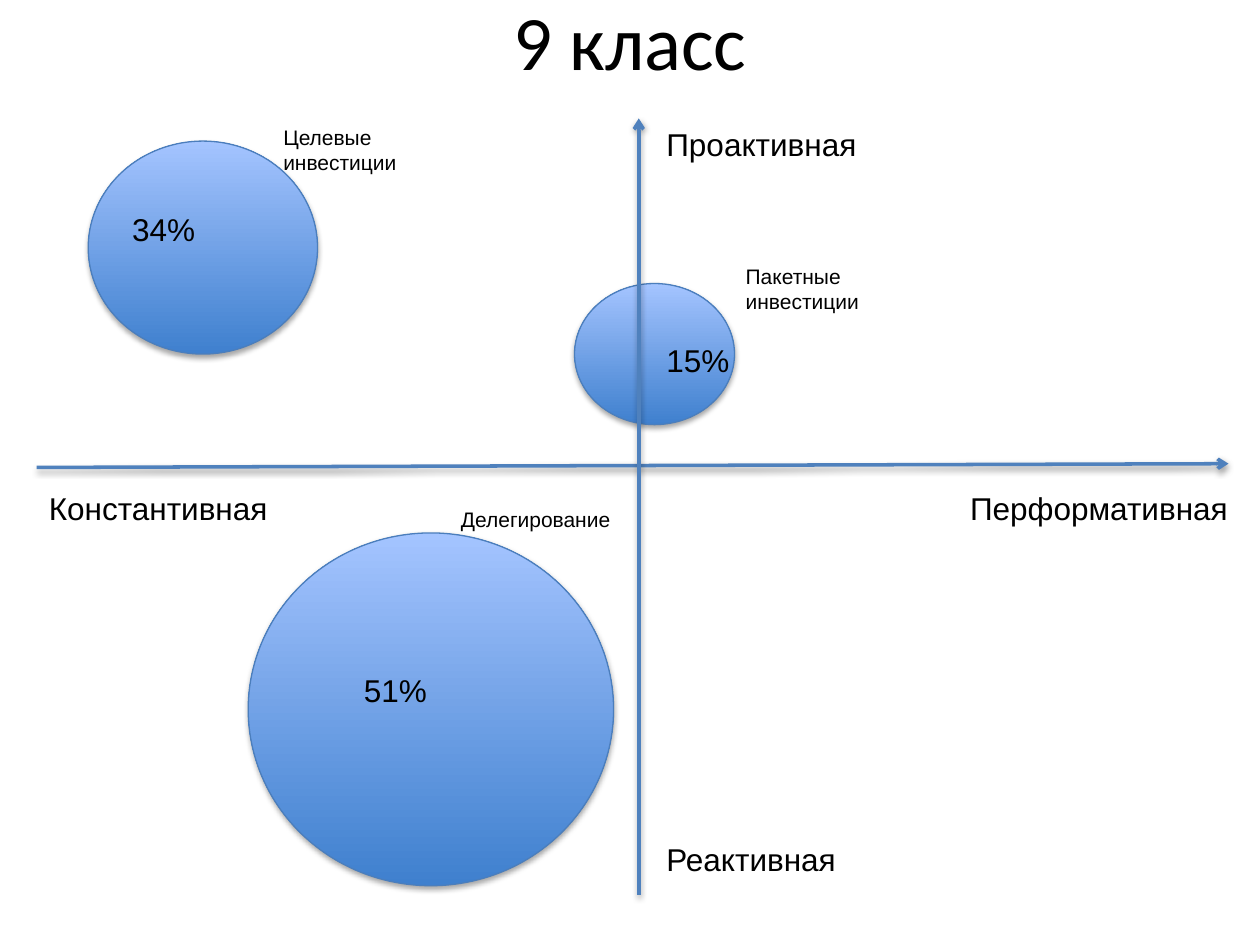
from lxml.etree import SubElement
from pptx import Presentation
from pptx.dml.color import RGBColor
from pptx.enum.shapes import MSO_CONNECTOR, MSO_SHAPE
from pptx.enum.text import MSO_ANCHOR, MSO_AUTO_SIZE, PP_ALIGN
from pptx.oxml.ns import qn
from pptx.util import Inches, Pt


class Theme:
    ink = RGBColor.from_string("000000")
    axis = RGBColor.from_string("4F81BD")
    edge = RGBColor.from_string("4B7EBC")
    shade = [RGBColor.from_string(c) for c in ("3F80CE", "A4C4FF")]
    title = {"size": Pt(44), "name": "Calibri"}
    label = {"size": Pt(18), "name": "Arial"}
    note = {"size": Pt(12), "name": "Arial"}
    frame = {"word_wrap": True, "auto_size": MSO_AUTO_SIZE.SHAPE_TO_FIT_TEXT}


COLS, ROWS = 100, 75
CELL = Inches(10) / COLS
PLOT = (2.9, 9.4, 94.6, 61.6)
HEAD = (5, -3.1, 90, 12.5)

ENDS = [
    ("Проактивная", (49, 0, 24.1, 4)),
    ("Реактивная", (49, 56.8, 27.9, 4)),
    ("Перформативная", (73.1, 28.9, 22.9, 4)),
    ("Константивная", (0, 28.9, 25, 4)),
]
GROUPS = [
    ("Делегирование", (32.7, 30.3, 15.1, 3),
     "51%", (25, 43.4, 12.5, 4), (16.8, 32.9, 29, 28)),
    ("Целевые инвестиции", (18.6, 0, 14, 5.1),
     "34%", (6.6, 6.8, 7.6, 4), (4.1, 1.8, 18.2, 16.9)),
    ("Пакетные инвестиции", (55.3, 11, 16.3, 5.1),
     "15%", (49, 17.2, 7.2, 4), (42.7, 13.1, 12.7, 11.2)),
]


def apply(item, style):
    for key, value in style.items():
        setattr(item, key, value)


def scale(*cells):
    return [round(n * CELL) for n in cells]


def within(box, part):
    x, y, w, h = part
    return scale(box[0] + x, box[1] + y, w, h)


def shadow(shape, alpha, drop):
    effects = SubElement(shape._element.spPr, qn("a:effectLst"))
    outer = SubElement(effects, qn("a:outerShdw"), blurRad=str(Pt(3.1)),
                       dist=str(Pt(drop)), dir="5400000", rotWithShape="0")
    color = SubElement(outer, qn("a:srgbClr"), val=str(Theme.ink))
    SubElement(color, qn("a:alpha"), val=str(alpha * 1000))


def write(frame, text, style):
    para = frame.paragraphs[0]
    run = para.add_run()
    run.text = text
    apply(run.font, style)
    run.font.color.rgb = Theme.ink
    return para


def label(slide, box, part, text, style):
    frame = slide.shapes.add_textbox(*within(box, part)).text_frame
    apply(frame, Theme.frame)
    write(frame, text, style)


def heading(slide, box, text):
    title = slide.shapes.title
    sides = ("left", "top", "width", "height")
    apply(title, dict(zip(sides, scale(*box))))
    title.text_frame.vertical_anchor = MSO_ANCHOR.MIDDLE
    write(title.text_frame, text, Theme.title).alignment = PP_ALIGN.CENTER


def bubble(slide, box, part):
    shape = slide.shapes.add_shape(MSO_SHAPE.OVAL, *within(box, part))
    shape.fill.gradient()
    shape.fill.gradient_angle = 90
    for i, stop in enumerate(shape.fill.gradient_stops):
        stop.position = i
        stop.color.rgb = Theme.shade[i]
    shape.line.color.rgb = Theme.edge
    shape.line.width = Pt(0.75)
    shadow(shape, 35, 1.8)


def arrow(slide, box, start, end):
    x, y = box[:2]
    points = scale(x + start[0], y + start[1], x + end[0], y + end[1])
    line = slide.shapes.add_connector(MSO_CONNECTOR.STRAIGHT, *points)
    line.line.color.rgb = Theme.axis
    line.line.width = Pt(2)
    SubElement(line.line._ln, qn("a:tailEnd"), type="arrow")
    shadow(line, 38, 1.6)


def axes(slide, box):
    wide, tall = box[2:]
    arrow(slide, box, (0, 27.7), (wide, 27.4))
    arrow(slide, box, (47.8, tall), (47.8, 0))
    for text, part in ENDS:
        label(slide, box, part, text, Theme.label)


def plot(slide, box):
    for *_, disc in GROUPS:
        bubble(slide, box, disc)
    axes(slide, box)
    for name, spot, share, place, _ in GROUPS:
        label(slide, box, spot, name, Theme.note)
        label(slide, box, place, share, Theme.label)


def main():
    deck = Presentation()
    deck.slide_width, deck.slide_height = scale(COLS, ROWS)
    slide = deck.slides.add_slide(deck.slide_layouts[5])
    heading(slide, HEAD, "9 класс")
    plot(slide, PLOT)
    deck.save("out.pptx")


if __name__ == "__main__":
    main()
